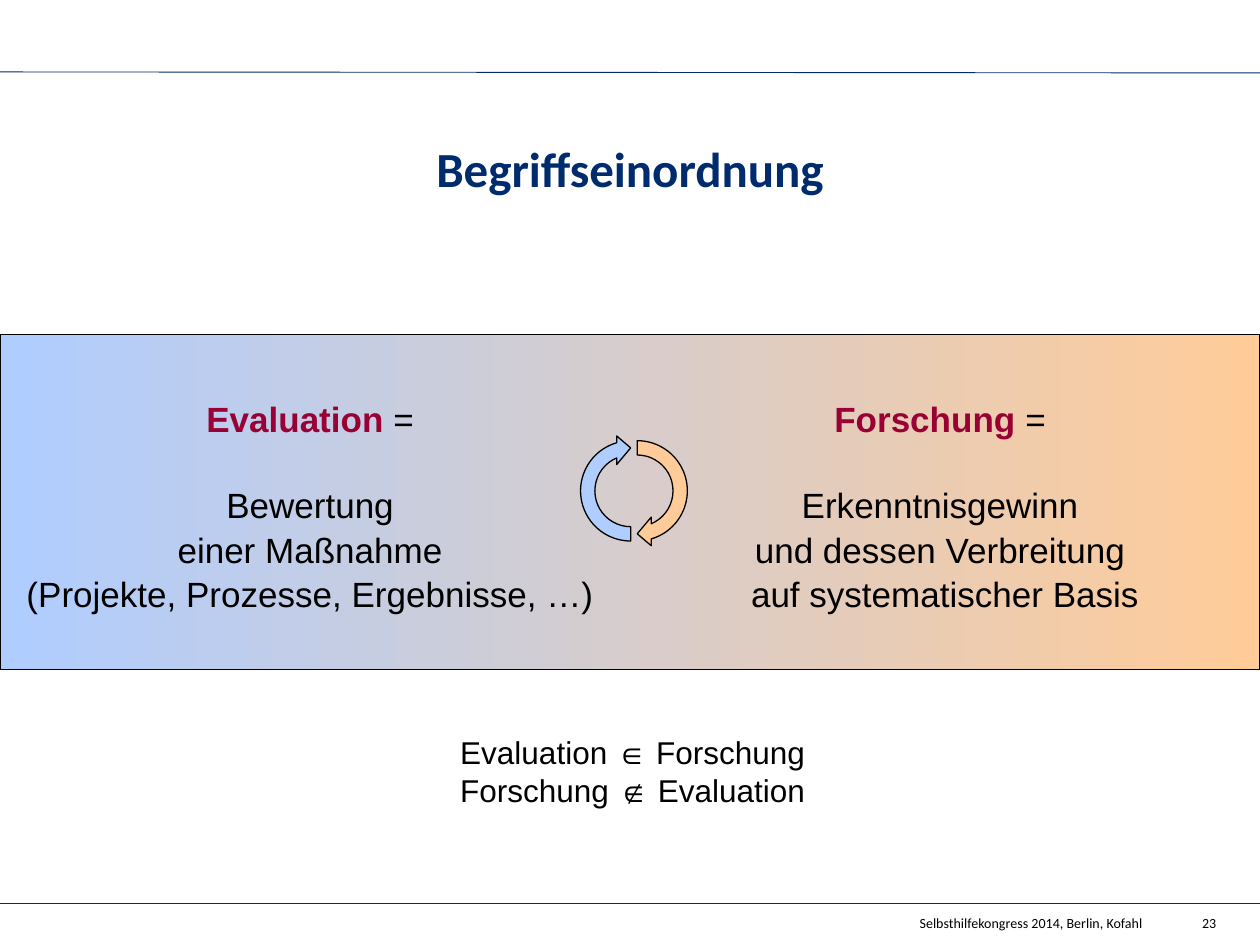
from dataclasses import dataclass

import pptx
import pptx.dml.color
import pptx.enum.shapes
import pptx.enum.text
import pptx.oxml.ns
import pptx.util
from lxml import etree
from pptx.util import Cm

ALIGN = pptx.enum.text.PP_ALIGN
ANCHOR = pptx.enum.text.MSO_ANCHOR
SHAPE = pptx.enum.shapes.MSO_SHAPE

NAVY, BLACK, RED = "002B6D", "000000", "990033"
BLUE, PEACH = "AFCDFF", "FFCC99"
WIDE, HIGH = 25.4, 19.05
HALF = WIDE / 2


@dataclass
class Label:
    """A text box; places are in centimetres."""
    lines: list[str]
    left: float
    top: float
    width: float
    height: float
    size: int
    font: str = "Arial"
    color: str = BLACK
    bold: bool = False
    align: ALIGN = ALIGN.CENTER
    anchor: ANCHOR = ANCHOR.TOP


@dataclass
class Term:
    """One half of the band: a name and what it means."""
    name: str
    lines: list[str]
    left: float


@dataclass
class Arrow:
    left: float
    turn: int
    color: str


def rgb(code: str) -> pptx.dml.color.RGBColor:
    return pptx.dml.color.RGBColor.from_string(code)


def edge(shape, color: str, width: float) -> None:
    shape.line.color.rgb = rgb(color)
    shape.line.width = pptx.util.Pt(width)


def style(run, size: int, font: str, color: str, bold: bool) -> None:
    run.font.size = pptx.util.Pt(size)
    run.font.name = font
    run.font.color.rgb = rgb(color)
    run.font.bold = bold


def add_rule(slide, start: float, end: float) -> None:
    rule = slide.shapes.add_connector(
        pptx.enum.shapes.MSO_CONNECTOR.STRAIGHT,
        Cm(0), Cm(start), Cm(WIDE), Cm(end))
    edge(rule, NAVY, 0.5)
    etree.SubElement(rule._element.spPr, pptx.oxml.ns.qn("a:effectLst"))


def add_label(slide, label: Label):
    box = slide.shapes.add_textbox(
        Cm(label.left), Cm(label.top), Cm(label.width), Cm(label.height))
    frame = box.text_frame
    frame.word_wrap = True
    frame.vertical_anchor = label.anchor
    frame.text = "\n".join(label.lines)
    for para in frame.paragraphs:
        para.alignment = label.align
        for run in para.runs:
            style(run, label.size, label.font, label.color, label.bold)
    return frame


def add_term(slide, term: Term) -> None:
    frame = add_label(slide, Label(
        [term.name, *term.lines], term.left, 6, HALF, 8.36, 20,
        anchor=ANCHOR.MIDDLE))
    for para in frame.paragraphs:
        para.line_spacing = 1.05
    head, first = frame.paragraphs[:2]
    style(head.runs[0], 20, "Arial", RED, True)
    sign = head.add_run()
    sign.text = " = "
    style(sign, 20, "Arial", BLACK, False)
    first.space_before = pptx.util.Pt(24)


def add_band(slide) -> None:
    band = slide.shapes.add_shape(
        SHAPE.RECTANGLE, Cm(0), Cm(6.75), Cm(WIDE), Cm(6.75))
    band.shadow.inherit = False
    band.fill.gradient()
    band.fill.gradient_angle = 0
    for stop, color in zip(band.fill.gradient_stops, (BLUE, PEACH)):
        stop.color.rgb = rgb(color)
    edge(band, BLACK, 0.75)


def add_arrow(group, arrow: Arrow) -> None:
    shape = group.shapes.add_shape(
        SHAPE.CIRCULAR_ARROW, Cm(arrow.left), Cm(8.74), Cm(2.31), Cm(2.31))
    shape.rotation = arrow.turn
    shape.shadow.inherit = False
    shape.fill.solid()
    shape.fill.fore_color.rgb = rgb(arrow.color)
    edge(shape, BLACK, 0.75)


def main() -> None:
    deck = pptx.Presentation()
    deck.slide_width, deck.slide_height = Cm(WIDE), Cm(HIGH)
    slide = deck.slides.add_slide(deck.slide_layouts[6])

    # Rules at head and foot
    add_rule(slide, 1.45, 1.47)
    add_rule(slide, 18.21, 18.21)

    # Band with both terms
    add_band(slide)
    terms = [
        Term("Evaluation",
             ["Bewertung ", "einer Maßnahme ",
              "(Projekte, Prozesse, Ergebnisse, …) "], 0),
        Term("Forschung",
             ["Erkenntnisgewinn ", "und dessen Verbreitung ",
              "auf systematischer Basis"], HALF),
    ]
    for term in terms:
        add_term(slide, term)

    # Cycle between the terms
    cycle = slide.shapes.add_group_shape()
    for arrow in (Arrow(11.56, 270, BLUE), Arrow(11.69, 90, PEACH)):
        add_arrow(cycle, arrow)

    # Title, set relations and footer
    labels = [
        Label(["Begriffseinordnung"], 1.69, 1.69, 22.02, 3.39, 28,
              "Calibri", NAVY, True, anchor=ANCHOR.MIDDLE),
        Label(["Evaluation ∈ Forschung", "Forschung ∉ Evaluation"],
              7.42, 14.66, 10.67, 1.8, 18),
        Label(["Selbsthilfekongress 2014, Berlin, Kofahl"],
              15.24, 18.31, 8.05, 0.43, 8, "Calibri", align=ALIGN.RIGHT),
        Label(["23"], 23.5, 18.31, 1.27, 0.43, 8, "Calibri",
              align=ALIGN.RIGHT),
    ]
    for label in labels:
        add_label(slide, label)

    deck.save("out.pptx")


if __name__ == "__main__":
    main()
